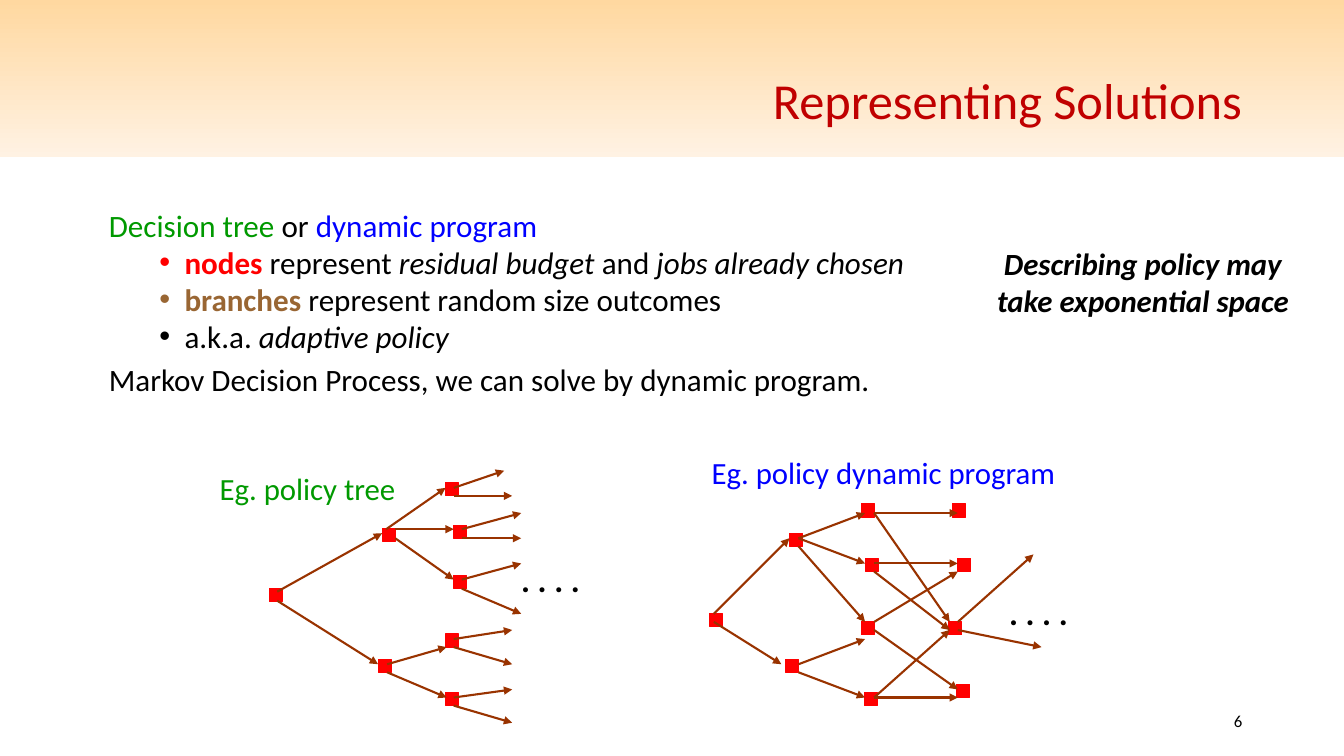
from lxml.etree import SubElement
from pptx import Presentation
from pptx.dml.color import RGBColor
from pptx.enum.shapes import MSO_CONNECTOR, MSO_SHAPE
from pptx.enum.text import MSO_ANCHOR, MSO_AUTO_SIZE, PP_ALIGN
from pptx.oxml.ns import qn
from pptx.util import Inches, Pt

COLORS = {
    "band_top": "FFD8A0", "band_bottom": "FFF2E3", "title": "C00000",
    "text": "000000", "tree": "009900", "program": "0000FF",
    "node": "FF0000", "branch": "996633", "arrow": "993300",
}
FONT = "Calibri"
NODE_SIZE = 0.13

BODY = [
    (0, [("Decision tree", {"color": "tree"}), (" or ", {}),
         ("dynamic program", {"color": "program"})]),
    (1, [("nodes", {"color": "node", "bold": True}), (" represent ", {}),
         ("residual budget", {"italic": True}), (" and ", {}),
         ("jobs already chosen", {"italic": True})]),
    (1, [("branches ", {"color": "branch", "bold": True}),
         ("represent random size outcomes", {})]),
    (1, [("a.k.a. ", {}), ("adaptive policy", {"italic": True})]),
    (0, [("Markov Decision Process, we can solve by dynamic program.", {})]),
]

TREE_NODES = [
    (0.67, 1.84), (1.79, 1.24), (1.75, 2.54), (2.42, 0.79),
    (2.5, 1.21), (2.5, 1.71), (2.42, 2.29), (2.42, 2.87),
]
TREE_ARROWS = [
    ((0.75, 1.87), (1.79, 1.29)), ((0.75, 1.96), (1.75, 2.59)),
    ((1.84, 2.67), (2.43, 2.92)), ((1.84, 2.59), (2.43, 2.42)),
    ((1.92, 1.34), (2.5, 1.75)), ((1.92, 1.25), (2.5, 1.25)),
    ((1.83, 1.25), (2.42, 0.84)), ((2.58, 1.84), (3.17, 2.09)),
    ((2.58, 1.75), (3.17, 1.59)), ((2.5, 0.92), (3.08, 0.92)),
    ((2.5, 0.84), (3, 0.67)), ((2.58, 1.34), (3.17, 1.34)),
    ((2.58, 1.25), (3.17, 1.09)), ((2.5, 2.42), (3.08, 2.59)),
    ((2.5, 2.34), (3.08, 2.25)), ((2.5, 3), (3.08, 3.17)),
    ((2.5, 2.92), (3.08, 2.84)),
]
PROGRAM_NODES = [
    (0.54, 2.09), (1.33, 1.29), (1.29, 2.54), (2.04, 1), (2.04, 2.17),
    (2.08, 1.54), (2.07, 2.87), (2.95, 1), (2.91, 2.17), (3, 1.54),
    (2.99, 2.79),
]
PROGRAM_ARROWS = [
    ((0.58, 2.09), (1.33, 1.34)), ((0.58, 2.17), (1.25, 2.59)),
    ((1.42, 2.67), (2.08, 2.92)), ((1.42, 1.42), (2.08, 2.17)),
    ((1.42, 2.59), (2.08, 2.34)), ((1.42, 1.34), (2.08, 1.59)),
    ((1.42, 1.34), (2.08, 1.09)), ((2.17, 1.09), (3, 1.09)),
    ((2.17, 1.59), (3, 1.59)), ((2.17, 2.25), (3, 2.84)),
    ((2.17, 2.92), (3, 2.92)), ((2.17, 2.92), (2.92, 2.25)),
    ((2.17, 2.17), (3, 1.67)), ((2.17, 1.67), (2.92, 2.25)),
    ((2.17, 1.09), (2.92, 2.17)), ((3, 2.17), (3.75, 1.5)),
    ((3, 2.25), (3.83, 2.42)),
]


def rgb(name):
    """Return the named palette colour."""
    return RGBColor.from_string(COLORS[name])


def place(shape, box):
    """Move a shape to a box given as left, top, width, height in inches."""
    shape.left, shape.top, shape.width, shape.height = map(Inches, box)


def add_run(paragraph, text, size, color="text", bold=False, italic=False):
    """Append one formatted run to a paragraph."""
    run = paragraph.add_run()
    run.text = text
    font = run.font
    font.name, font.size, font.bold, font.italic = FONT, Pt(size), bold, italic
    font.color.rgb = rgb(color)


def add_text(slide, box, text, size=22, align=PP_ALIGN.LEFT, wrap=False,
             anchor=MSO_ANCHOR.TOP, **style):
    """Add a text box holding one formatted paragraph."""
    frame = slide.shapes.add_textbox(*map(Inches, box)).text_frame
    frame.word_wrap, frame.vertical_anchor = wrap, anchor
    paragraph = frame.paragraphs[0]
    paragraph.alignment = align
    add_run(paragraph, text, size, **style)


def add_header(slide, box):
    """Draw the gradient band behind the title and fill in the title."""
    left, top, width, height = box
    band = slide.shapes.add_shape(MSO_SHAPE.RECTANGLE, *map(Inches, box))
    band.shadow.inherit = False
    band.line.fill.background()
    band.fill.gradient()
    band.fill.gradient_angle = 270
    for stop, name in zip(band.fill.gradient_stops, ("band_top", "band_bottom")):
        stop.color.rgb = rgb(name)
    slide.shapes._spTree.insert(2, band._element)

    title = slide.shapes.title
    place(title, (left + 0.92, top + 0.3, width - 1.83, 1.45))
    frame = title.text_frame
    frame.auto_size, frame.vertical_anchor = MSO_AUTO_SIZE.NONE, MSO_ANCHOR.MIDDLE
    paragraph = frame.paragraphs[0]
    paragraph.alignment, paragraph.line_spacing = PP_ALIGN.RIGHT, 0.9
    add_run(paragraph, "Representing Solutions", 36, color="title")


def add_body(slide, box):
    """Fill the body placeholder with the two-level list."""
    body = slide.placeholders[1]
    place(body, box)
    frame = body.text_frame
    frame.auto_size = MSO_AUTO_SIZE.NONE
    for index, (level, runs) in enumerate(BODY):
        paragraph = frame.add_paragraph() if index else frame.paragraphs[0]
        paragraph.level, paragraph.line_spacing = level, 0.8
        paragraph.space_before = Pt(5 if level else 10)
        properties = paragraph._p.get_or_add_pPr()
        properties.set("marL", str(Inches(0.25 + 0.5 * level)))
        properties.set("indent", str(Inches(-0.25)))
        if level:
            SubElement(properties, qn("a:buFont"), typeface="Arial")
            SubElement(properties, qn("a:buChar"), char="•")
        else:
            SubElement(properties, qn("a:buNone"))
        for text, style in runs:
            add_run(paragraph, text, 22.2, **style)


def add_node(slide, left, top):
    """Draw one square graph node."""
    node = slide.shapes.add_shape(MSO_SHAPE.RECTANGLE, Inches(left), Inches(top),
                                  Inches(NODE_SIZE), Inches(NODE_SIZE))
    node.shadow.inherit = False
    node.fill.solid()
    node.fill.fore_color.rgb = node.line.color.rgb = rgb("node")
    node.line.width = Pt(0.75)


def add_arrow(slide, start, end):
    """Draw one branch arrow between two points."""
    arrow = slide.shapes.add_connector(MSO_CONNECTOR.STRAIGHT,
                                       *map(Inches, (*start, *end)))
    arrow.line.color.rgb = rgb("arrow")
    arrow.line.width = Pt(1.5)
    SubElement(arrow.line._get_or_add_ln(), qn("a:tailEnd"), type="triangle")
    SubElement(arrow._element.spPr, qn("a:effectLst"))


def add_graph(slide, box, nodes, arrows, label, label_at, dots_at, color):
    """Draw a policy graph with its label and trailing dots inside a box."""
    left, top, width, height = box

    def shift(point):
        """Turn a point inside the box into a point on the slide."""
        return left + point[0], top + point[1]

    for node in nodes:
        add_node(slide, *shift(node))
    for start, end in arrows:
        add_arrow(slide, shift(start), shift(end))
    add_text(slide, (*shift(label_at), width - label_at[0], 0.47), label, color=color)
    add_text(slide, (*shift(dots_at), 0.78, 0.5), ". . . .", size=24, bold=True)


def main():
    """Build the slide and save it."""
    presentation = Presentation()
    presentation.slide_width, presentation.slide_height = Inches(13.33), Inches(7.5)
    slide = presentation.slides.add_slide(presentation.slide_layouts[1])
    add_header(slide, (0, 0, 13.33, 1.56))
    add_body(slide, (0.98, 2.07, 9.25, 1.92))
    add_text(slide, (9.71, 2.38, 3.25, 0.83),
             "Describing policy may take exponential space",
             align=PP_ALIGN.CENTER, wrap=True, bold=True, italic=True)
    add_graph(slide, (2, 4, 2.03, 3.2), TREE_NODES, TREE_ARROWS, "Eg. policy tree",
              (0.08, 0.61), (3.07, 1.5), "tree")
    add_graph(slide, (6.5, 4, 4.08, 3.2), PROGRAM_NODES, PROGRAM_ARROWS,
              "Eg. policy dynamic program", (0.46, 0.45), (3.41, 1.82), "program")
    add_text(slide, (9.42, 6.95, 3, 0.4), "6", size=12, align=PP_ALIGN.RIGHT,
             wrap=True, anchor=MSO_ANCHOR.MIDDLE)
    presentation.save("out.pptx")


if __name__ == "__main__":
    main()
